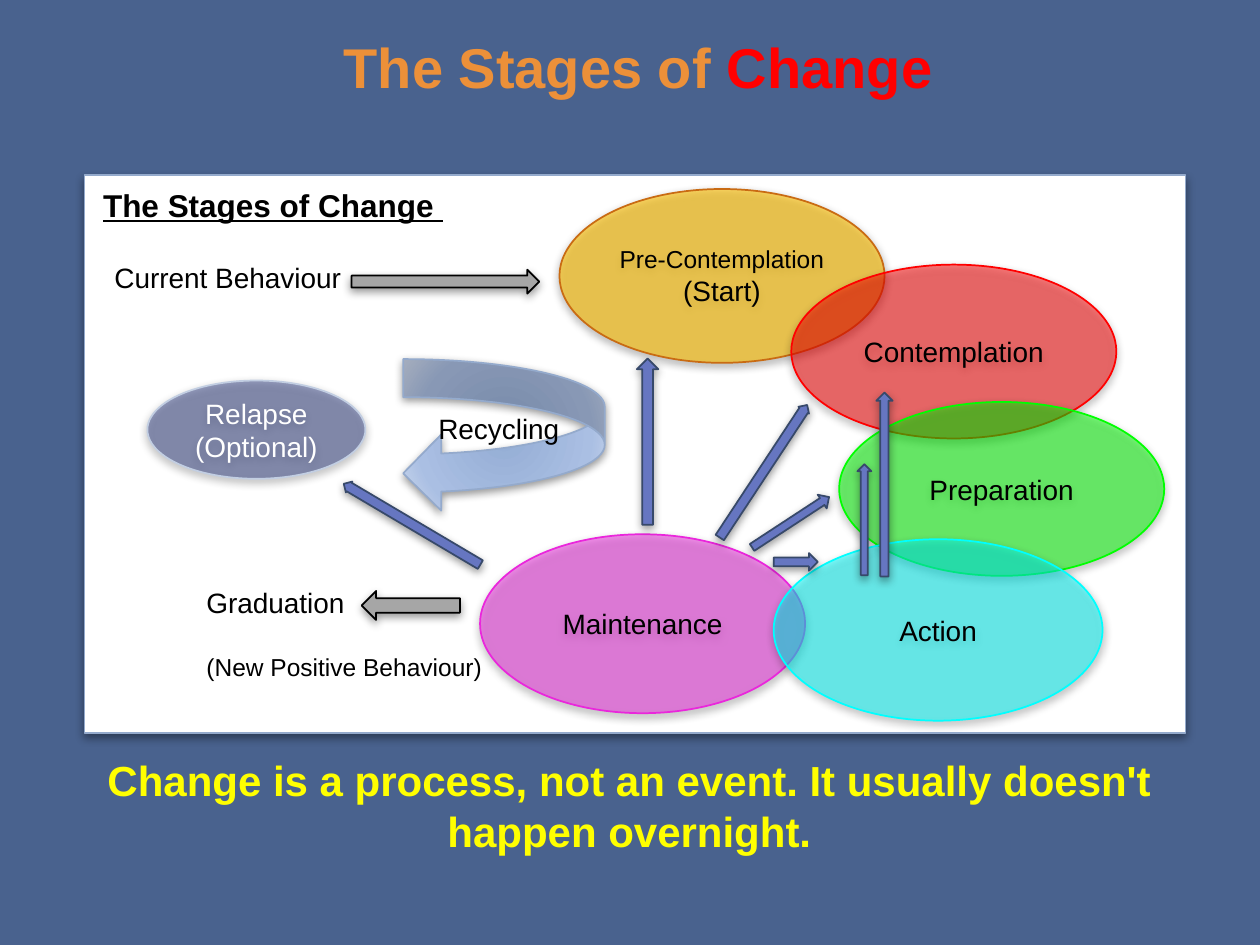
from lxml import etree
from pptx import Presentation
from pptx.dml.color import RGBColor
from pptx.enum.shapes import MSO_SHAPE
from pptx.enum.text import MSO_ANCHOR, PP_ALIGN
from pptx.oxml import parse_xml
from pptx.oxml.ns import nsdecls, qn
from pptx.util import Inches, Pt

RECTANGLE = MSO_SHAPE.RECTANGLE
OVAL = MSO_SHAPE.OVAL
RIGHT_ARROW = MSO_SHAPE.RIGHT_ARROW
CURVED_ARROW = MSO_SHAPE.CURVED_LEFT_ARROW
CENTER, LEFT = PP_ALIGN.CENTER, PP_ALIGN.LEFT
TOP, MIDDLE = MSO_ANCHOR.TOP, MSO_ANCHOR.MIDDLE
TITLE_ONLY = 5
COLUMNS, ROWS = 100, 75

BLACK, WHITE = "000000", "FFFFFF"
BLUE, NAVY, PALE_BLUE = "6676C1", "37496A", "94AACC"
GREY = "A6A6A6"


def color(hex_text):
    return RGBColor.from_string(hex_text)


class StageSlide:
    font_name = "Arial"

    def __init__(self, presentation, background):
        self.slide = presentation.slides.add_slide(presentation.slide_layouts[TITLE_ONLY])
        self.column = presentation.slide_width / COLUMNS
        self.row = presentation.slide_height / ROWS
        fill = self.slide.background.fill
        fill.solid()
        fill.fore_color.rgb = color(background)

    def place(self, box):
        """Turn left, top, width, height in grid cells into slide lengths."""
        left, top, width, height = box
        return (round(left * self.column), round(top * self.row),
                round(width * self.column), round(height * self.row))

    def add_text(self, shape, paragraphs, align, anchor, margins):
        """Fill a shape; each paragraph is a list of (text, size, hex, bold) runs."""
        frame = shape.text_frame
        frame.word_wrap = True
        frame.vertical_anchor = anchor
        frame.margin_left = frame.margin_right = Inches(margins[0])
        frame.margin_top = frame.margin_bottom = Inches(margins[1])
        for index, runs in enumerate(paragraphs):
            paragraph = frame.add_paragraph() if index else frame.paragraphs[0]
            paragraph.alignment = align
            for text, size, hex_text, bold in runs:
                run = paragraph.add_run()
                run.text = text
                run.font.name = self.font_name
                run.font.size = Pt(size)
                run.font.bold = bold
                run.font.color.rgb = color(hex_text)
        return frame

    def title(self, box, runs):
        shape = self.slide.shapes.title
        shape.left, shape.top, shape.width, shape.height = self.place(box)
        self.add_text(shape, [runs], CENTER, TOP, (0.1, 0.05))

    def label(self, box, runs, align=LEFT, margins=(0.1, 0.05)):
        """Add a text box with one paragraph per run."""
        shape = self.slide.shapes.add_textbox(*self.place(box))
        return self.add_text(shape, [[run] for run in runs], align, TOP, margins)

    def shape(self, kind, box, fill, line, opacity=100):
        shape = self.slide.shapes.add_shape(kind, *self.place(box))
        shape.fill.solid()
        shape.fill.fore_color.rgb = color(fill)
        if opacity < 100:
            fill_color = shape._element.spPr.find(qn("a:solidFill")).find(qn("a:srgbClr"))
            etree.SubElement(fill_color, qn("a:alpha"), val=str(opacity * 1000))
        shape.line.color.rgb = color(line)
        shape.line.width = Pt(1)
        self.add_shadow(shape)
        return shape

    def add_shadow(self, shape):
        shape.shadow.inherit = False
        effects = shape._element.spPr.find(qn("a:effectLst"))
        effects.append(parse_xml(
            f'<a:outerShdw {nsdecls("a")} blurRad="{Pt(5)}" dist="{Pt(2)}" dir="5400000" '
            f'rotWithShape="0"><a:srgbClr val="{BLACK}"><a:alpha val="40000"/></a:srgbClr>'
            '</a:outerShdw>'))

    def stage(self, box, fill, line, lines, opacity=50, text_color=BLACK):
        """Add a see-through ellipse holding (text, size) lines."""
        shape = self.shape(OVAL, box, fill, line, opacity)
        paragraphs = [[(text, size, text_color, False)] for text, size in lines]
        self.add_text(shape, paragraphs, CENTER, MIDDLE, (0, 0))

    def arrow(self, box, rotation=0, fill=BLUE, line=NAVY, shaft=0.5):
        shape = self.shape(RIGHT_ARROW, box, fill, line)
        shape.rotation = rotation
        shape.adjustments[0] = shaft

    def curved_arrow(self, box, stops):
        shape = self.shape(CURVED_ARROW, box, stops[0][1], PALE_BLUE)
        stop_xml = "".join(
            f'<a:gs pos="{position * 1000}"><a:srgbClr val="{hex_text}"/></a:gs>'
            for position, hex_text in stops)
        gradient = parse_xml(
            f'<a:gradFill {nsdecls("a")} rotWithShape="1"><a:gsLst>{stop_xml}</a:gsLst>'
            '<a:path path="circle"><a:fillToRect l="100000" t="100000" r="100000" b="100000"/>'
            '</a:path></a:gradFill>')
        properties = shape._element.spPr
        properties.replace(properties.find(qn("a:solidFill")), gradient)


def main():
    presentation = Presentation()
    presentation.slide_width, presentation.slide_height = Inches(10), Inches(7.5)
    page = StageSlide(presentation, "49628E")

    page.title((3.3, 2.1, 94.7, 8), [("The Stages of ", 32, "EC9039", True),
                                     ("Change", 32, "FF0000", True)])
    page.shape(RECTANGLE, (6.7, 13.9, 87.4, 44.3), WHITE, PALE_BLUE)

    page.stage((44.4, 15, 25.8, 13.8), "FFC000", "C96B13",
               [("Pre-Contemplation", 14), ("(Start)", 16)], opacity=60)
    for name, box, hue in [
        ("Contemplation", (62.8, 21, 25.8, 13.8), "FF0000"),
        ("Preparation", (66.6, 31.9, 25.8, 13.8), "00FF00"),
        ("Maintenance", (38.1, 42.4, 25.8, 14.2), "EA26DC"),
        ("Action", (61.4, 42.8, 26.1, 14.4), "00FFFF"),
    ]:
        page.stage(box, hue, hue, [(name, 16)])

    heading = page.label((7.2, 14.3, 29.3, 4), [("The Stages of Change ", 18, BLACK, True)])
    heading.paragraphs[0].runs[0].font.underline = True
    page.label((8.1, 20.2, 29.3, 3.7), [("Current Behaviour", 16, BLACK, False)])
    outcome = page.label((15.4, 46, 29.3, 9.1), [("Graduation", 16, BLACK, False),
                                                 ("(New Positive Behaviour)", 14, BLACK, False)])
    outcome.paragraphs[1].space_before = Pt(18.4)

    page.arrow((27.9, 21.4, 14.9, 1.9), fill=GREY, line=BLACK)
    page.arrow((28.7, 46.9, 7.8, 2.3), 180, GREY, BLACK)
    page.stage((11.7, 30.2, 17.3, 7.8), "364486", "C2CEE2",
               [("Relapse", 16), ("(Optional)", 16)], text_color=WHITE)

    for box, rotation, shaft in [
        ((44.8, 34.2, 13.2, 1.7), 270, 0.5),
        ((54.3, 36.9, 12.6, 1), 303.4, 0.78),
        ((64.2, 40.7, 8.8, 1.1), 270, 0.5),
        ((62.9, 37.8, 14.6, 1.3), 270, 0.5),
        ((59.1, 40.8, 7.3, 1.3), 326.8, 0.5),
        ((61.4, 43.9, 3.5, 1.4), 0, 0.5),
        ((26.4, 41.1, 12.6, 1), 210.6, 0.78),
    ]:
        page.arrow(box, rotation, shaft=shaft)

    page.curved_arrow((32, 28.5, 16, 12.1), [(0, "94ADD4"), (69, "AABFE3"), (100, "CFDAEE")])
    page.label((33.8, 32.2, 19.1, 3.7), [("Recycling", 16, BLACK, False)])
    page.label((3, 59.5, 93.9, 8.8),
               [("Change is a process, not an event. It usually doesn't happen overnight.",
                 24, "FFFF00", True)], CENTER, (0.07, 0.04))
    presentation.save("out.pptx")


if __name__ == "__main__":
    main()
